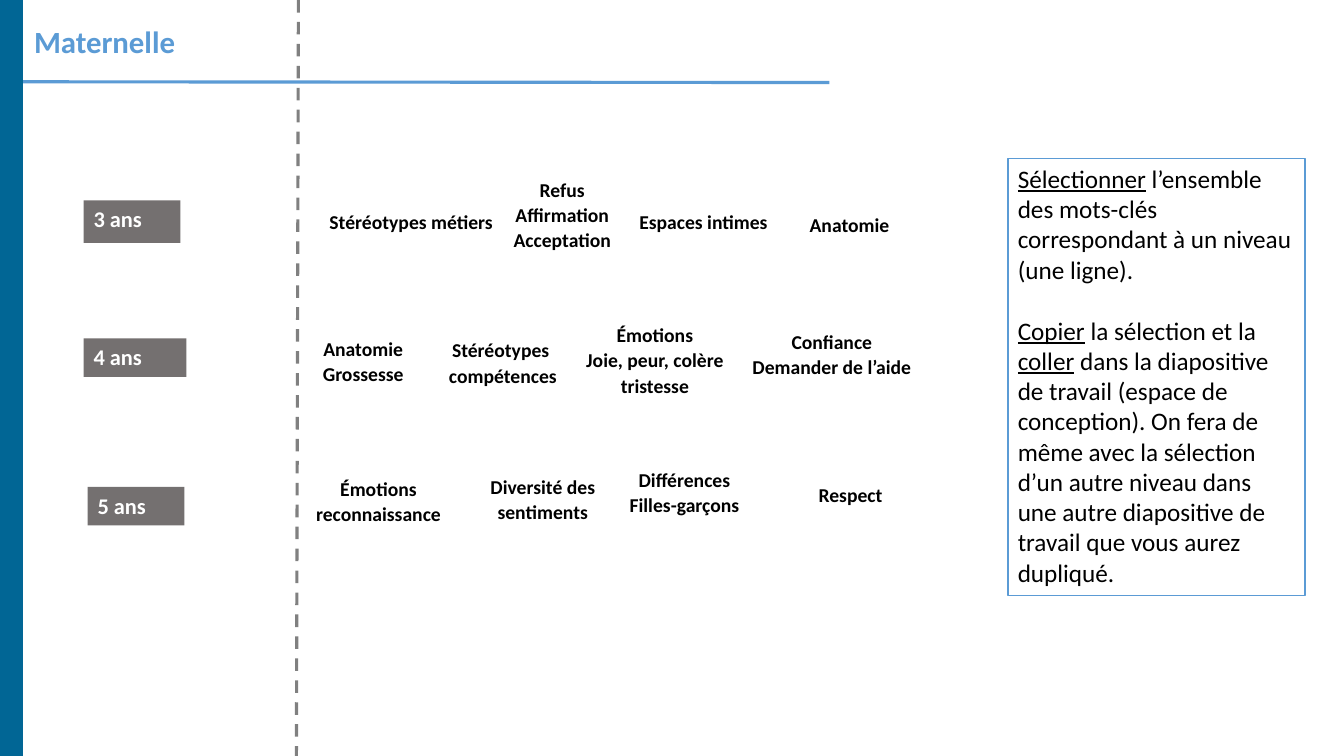
from dataclasses import dataclass

import pptx
import pptx.dml.color
import pptx.enum.dml
import pptx.enum.shapes
import pptx.enum.text
import pptx.oxml
import pptx.shapes.autoshape
import pptx.shapes.connector
import pptx.slide
import pptx.text.text
import pptx.util

Cm = pptx.util.Cm
Pt = pptx.util.Pt
RGBColor = pptx.dml.color.RGBColor

BLACK = RGBColor(0x00, 0x00, 0x00)
WHITE = RGBColor(0xFF, 0xFF, 0xFF)
LIGHT_BLUE = RGBColor(0x5B, 0x9B, 0xD5)
DEEP_BLUE = RGBColor(0x01, 0x66, 0x95)
LABEL_GREY = RGBColor(0x74, 0x70, 0x70)
DASH_GREY = RGBColor(0x80, 0x80, 0x80)
FONT_NAME = "Calibri"


@dataclass(frozen=True)
class Box:
    """A frame, in centimetres."""
    left: float
    top: float
    width: float
    height: float = 2.34

    def lengths(self) -> tuple[pptx.util.Length, ...]:
        return Cm(self.left), Cm(self.top), Cm(self.width), Cm(self.height)


@dataclass(frozen=True)
class Keyword:
    box: Box
    lines: tuple[str, ...]


@dataclass(frozen=True)
class Level:
    label: str
    label_box: Box
    keywords: tuple[Keyword, ...]


@dataclass(frozen=True)
class Segment:
    text: str
    underlined: bool = False


LEVELS = (
    Level("3 ans", Box(2.11, 5.05, 2.44, 1.07), (
        Keyword(Box(8.03, 5.13, 4.67), ("Stéréotypes métiers",)),
        Keyword(Box(12.67, 4.32, 3), ("Refus", "Affirmation", "Acceptation ")),
        Keyword(Box(15.85, 5.13, 3.76), ("Espaces intimes",)),
        Keyword(Box(20.14, 5.21, 2.54), ("Anatomie",)),
    )),
    Level("4 ans", Box(2.11, 8.53, 2.59, 0.97), (
        Keyword(Box(7.87, 8.33, 2.57), ("Anatomie", "Grossesse")),
        Keyword(Box(11.05, 8.36, 3.25), ("Stéréotypes ", "compétences")),
        Keyword(Box(14.5, 7.98, 4.01), ("Émotions", "Joie, peur, colère", "tristesse")),
        Keyword(Box(18.69, 8.15, 4.55), ("Confiance", "Demander de l’aide ")),
    )),
    Level("5 ans", Box(2.21, 12.27, 2.44, 0.97), (
        Keyword(Box(7.7, 11.86, 3.68, 2.79), ("Émotions", "reconnaissance ")),
        Keyword(Box(12.09, 11.81, 3.18), ("Diversité des ", "sentiments")),
        Keyword(Box(15.6, 11.63, 3.3), ("Différences", "Filles-garçons")),
        Keyword(Box(20.37, 12.01, 2.13), ("Respect",)),
    )),
)

INSTRUCTIONS = (
    (
        Segment("Sélectionner", True),
        Segment(" l’ensemble des mots-clés correspondant à un niveau (une ligne)."),
    ),
    (
        Segment("Copier", True),
        Segment(" la sélection et la "),
        Segment("coller", True),
        Segment(" dans la diapositive de travail (espace de conception). On fera de même "
                "avec la sélection d’un autre niveau dans une autre diapositive de travail "
                "que vous aurez dupliqué."),
    ),
)


def add_run(paragraph: pptx.text.text._Paragraph, text: str, size: float,
            color: RGBColor, bold: bool = True, underlined: bool = False) -> None:
    run = paragraph.add_run()
    run.text = text
    run.font.name = FONT_NAME
    run.font.size = Pt(size)
    run.font.bold = bold
    run.font.underline = underlined
    run.font.color.rgb = color


def add_rectangle(slide: pptx.slide.Slide, box: Box,
                  fill: RGBColor) -> pptx.shapes.autoshape.Shape:
    """Add a flat, unlined rectangle whose text starts at its top left."""
    shape = slide.shapes.add_shape(
        pptx.enum.shapes.MSO_SHAPE.RECTANGLE, *box.lengths())
    shape.shadow.inherit = False
    shape.fill.solid()
    shape.fill.fore_color.rgb = fill
    shape.line.fill.background()
    shape.text_frame.word_wrap = True
    shape.text_frame.vertical_anchor = pptx.enum.text.MSO_ANCHOR.TOP
    shape.text_frame.paragraphs[0].alignment = pptx.enum.text.PP_ALIGN.LEFT
    return shape


def add_line(slide: pptx.slide.Slide, start: tuple[float, float],
             end: tuple[float, float], color: RGBColor) -> pptx.shapes.connector.Connector:
    line = slide.shapes.add_connector(
        pptx.enum.shapes.MSO_CONNECTOR.STRAIGHT,
        *(Cm(value) for value in start + end))
    line.line.color.rgb = color
    line.line.width = Pt(2.25)
    properties = line.element.spPr
    properties.append(pptx.oxml.parse_xml(
        '<a:effectLst xmlns:a="http://schemas.openxmlformats.org/drawingml/2006/main"/>'))
    return line


def add_keyword(slide: pptx.slide.Slide, keyword: Keyword) -> None:
    frame = slide.shapes.add_textbox(*keyword.box.lengths()).text_frame
    frame.word_wrap = False
    for index, line in enumerate(keyword.lines):
        paragraph = frame.add_paragraph() if index else frame.paragraphs[0]
        paragraph.alignment = pptx.enum.text.PP_ALIGN.CENTER
        paragraph.line_spacing = 1.07
        add_run(paragraph, line, 14, BLACK)


def add_level(slide: pptx.slide.Slide, level: Level) -> None:
    label = add_rectangle(slide, level.label_box, LABEL_GREY)
    add_run(label.text_frame.paragraphs[0], level.label, 16, WHITE)
    for keyword in level.keywords:
        add_keyword(slide, keyword)


def add_title(slide: pptx.slide.Slide) -> None:
    frame = slide.shapes.add_textbox(*Box(0.61, -0.51, 6.05, 2.9).lengths()).text_frame
    frame.word_wrap = True
    frame.vertical_anchor = pptx.enum.text.MSO_ANCHOR.MIDDLE
    frame.margin_top = Cm(0.3)
    add_run(frame.paragraphs[0], "Maternelle", 22, LIGHT_BLUE)


def add_instructions(slide: pptx.slide.Slide) -> None:
    panel = add_rectangle(slide, Box(25.4, 3.99, 7.49, 11.02), WHITE)
    panel.line.color.rgb = LIGHT_BLUE
    panel.line.width = Pt(1)
    frame = panel.text_frame
    for index, segments in enumerate(INSTRUCTIONS):
        paragraph = frame.add_paragraph() if index else frame.paragraphs[0]
        paragraph.alignment = pptx.enum.text.PP_ALIGN.LEFT
        paragraph.space_before = Pt(22 if index else 0)
        for segment in segments:
            add_run(paragraph, segment.text, 18, BLACK, False, segment.underlined)


def main() -> None:
    presentation = pptx.Presentation()
    presentation.slide_width = Cm(33.87)
    presentation.slide_height = Cm(19.05)
    slide = presentation.slides.add_slide(presentation.slide_layouts[6])

    for level in LEVELS:
        add_level(slide, level)
    add_line(slide, (0, 2.06), (20.9, 2.08), LIGHT_BLUE)
    add_title(slide)
    divider = add_line(slide, (7.52, 0), (7.47, 19.05), DASH_GREY)
    divider.line.dash_style = pptx.enum.dml.MSO_LINE.DASH
    add_instructions(slide)
    add_rectangle(slide, Box(0, 0, 0.58, 19.05), DEEP_BLUE)

    presentation.save("out.pptx")


if __name__ == "__main__":
    main()
